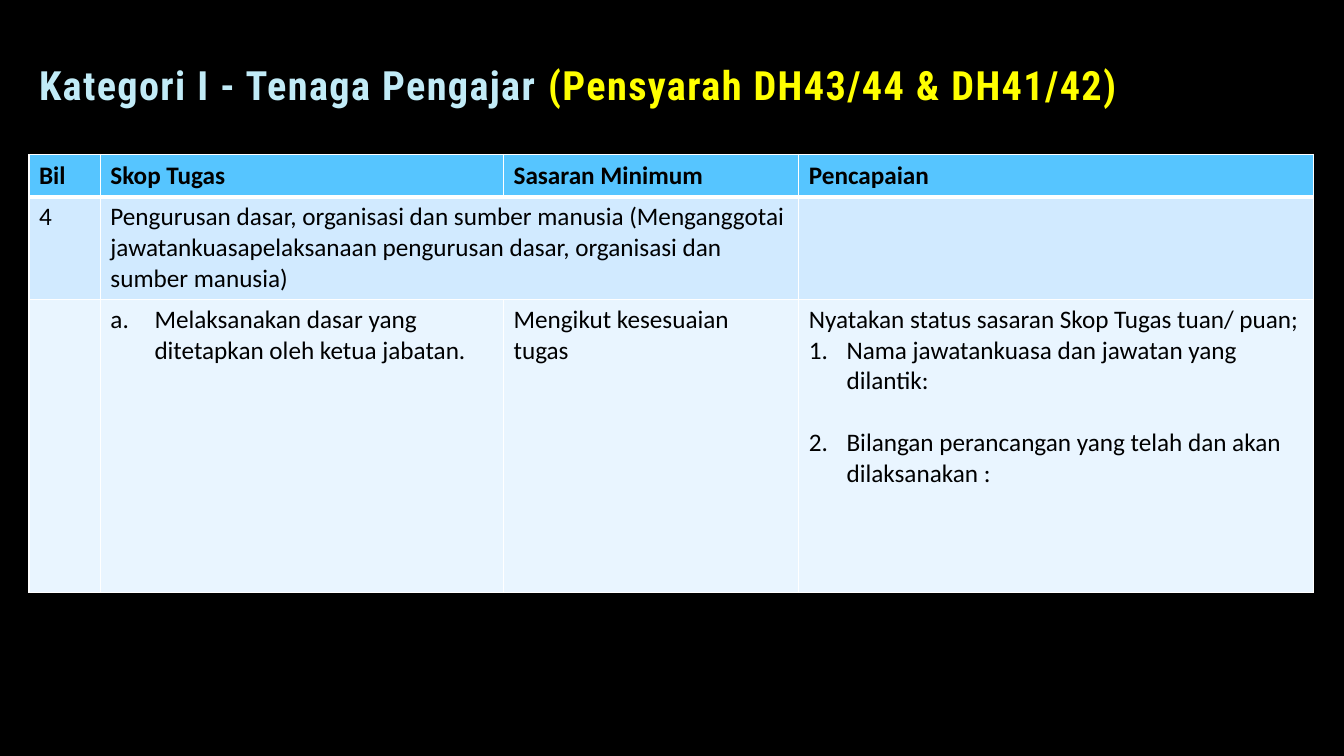
import pptx
import pptx.util
import pptx.dml.color
import pptx.enum.text
import pptx.oxml.ns
import lxml.etree

Cm, Pt = pptx.util.Cm, pptx.util.Pt

TITLE = [("Kategori I - Tenaga Pengajar ", "C1EBF7"),
         ("(Pensyarah DH43/44 & DH41/42)", "FFFF00")]

# Each cell is a list of (text, numbering scheme, indent in cm, space before in pt).
HEADINGS = ["Bil", "Skop Tugas", "Sasaran Minimum", "Pencapaian"]
ROWS = [
    [[(heading, None, 0, 0)] for heading in HEADINGS],
    [[("4", None, 0, 0)],
     [("Pengurusan dasar, organisasi dan sumber manusia (Menganggotai "
       "jawatankuasapelaksanaan pengurusan dasar, organisasi dan sumber manusia)",
       None, 0, 0)],
     [], []],
    [[],
     [("Melaksanakan dasar yang ditetapkan oleh ketua jabatan.", "alphaLcPeriod", 1.11, 0)],
     [("Mengikut kesesuaian tugas", None, 0, 0)],
     [("Nyatakan status sasaran Skop Tugas tuan/ puan;", None, 0, 0),
      ("Nama jawatankuasa dan jawatan yang dilantik:", "arabicPeriod", 0.95, 0),
      ("Bilangan perancangan yang telah dan akan dilaksanakan :", "arabicPeriod", 0.95, 22)]],
]
ROW_FILLS = ["56C5FF", "D1EAFF", "E9F5FF"]
COLUMN_WIDTHS = [1.8, 10.16, 7.44, 12.98]
ROW_HEIGHTS = [1.07, 2.56, 7.39]
LEFT = 0.73


def colour(value):
    return pptx.dml.color.RGBColor.from_string(value)


def add_element(parent, tag, **attributes):
    element = lxml.etree.SubElement(parent, pptx.oxml.ns.qn(tag))
    for name, value in attributes.items():
        element.set(name, str(value))
    return element


def add_run(paragraph, text, font_name, size, text_colour, bold):
    run = paragraph.add_run()
    run.text = text
    run.font.name = font_name
    run.font.size = Pt(size)
    run.font.bold = bold
    run.font.color.rgb = colour(text_colour)
    return run


def add_borders(cell, bottom_width):
    properties = cell._tc.get_or_add_tcPr()
    for side in "LRTB":
        width = bottom_width if side == "B" else 1
        line = add_element(properties, f"a:ln{side}", w=Pt(width))
        add_element(add_element(line, "a:solidFill"), "a:srgbClr", val="FFFFFF")


def fill_cell(cell, paragraphs, fill, is_heading):
    add_borders(cell, 3 if is_heading else 1)
    cell.fill.solid()
    cell.fill.fore_color.rgb = colour(fill)
    if is_heading:
        cell.vertical_anchor = pptx.enum.text.MSO_ANCHOR.MIDDLE
    for index, (text, numbering, indent, space_before) in enumerate(paragraphs):
        frame = cell.text_frame
        paragraph = frame.add_paragraph() if index else frame.paragraphs[0]
        if numbering:
            properties = paragraph._p.get_or_add_pPr()
            properties.set("marL", str(Cm(indent)))
            properties.set("indent", str(-Cm(indent)))
            add_element(properties, "a:buFont", typeface="+mj-lt")
            add_element(properties, "a:buAutoNum", type=numbering)
        if space_before:
            paragraph.space_before = Pt(space_before)
        add_run(paragraph, text, "Calibri", 18, "000000", is_heading)


def add_title(slide):
    title = slide.shapes.title
    title.left, title.top, title.width, title.height = Cm(LEFT), Cm(1.19), Cm(28.88), Cm(1.7)
    frame = title.text_frame
    frame.word_wrap = True
    frame.auto_size = pptx.enum.text.MSO_AUTO_SIZE.NONE
    frame.vertical_anchor = pptx.enum.text.MSO_ANCHOR.BOTTOM
    paragraph = frame.paragraphs[0]
    paragraph.alignment = pptx.enum.text.PP_ALIGN.LEFT
    paragraph.line_spacing = 0.9
    for text, text_colour in TITLE:
        run = add_run(paragraph, text, "Roboto Condensed", 28.8, text_colour, True)
        run.font._element.set("spc", "100")


def add_duty_table(slide):
    table = slide.shapes.add_table(
        len(ROWS), len(HEADINGS), Cm(LEFT), Cm(3.89),
        Cm(sum(COLUMN_WIDTHS)), Cm(sum(ROW_HEIGHTS))).table
    for column, width in zip(table.columns, COLUMN_WIDTHS):
        column.width = Cm(width)
    for row, height in zip(table.rows, ROW_HEIGHTS):
        row.height = Cm(height)
    for row_index, (cells, fill) in enumerate(zip(ROWS, ROW_FILLS)):
        for column_index, paragraphs in enumerate(cells):
            fill_cell(table.cell(row_index, column_index), paragraphs, fill, row_index == 0)
    table.cell(1, 1).merge(table.cell(1, 2))


def main():
    presentation = pptx.Presentation()
    presentation.slide_width = Cm(33.87)
    presentation.slide_height = Cm(19.05)
    slide = presentation.slides.add_slide(presentation.slide_layouts[5])
    slide.background.fill.solid()
    slide.background.fill.fore_color.rgb = colour("000000")
    add_duty_table(slide)
    add_title(slide)
    presentation.save("out.pptx")


if __name__ == "__main__":
    main()
